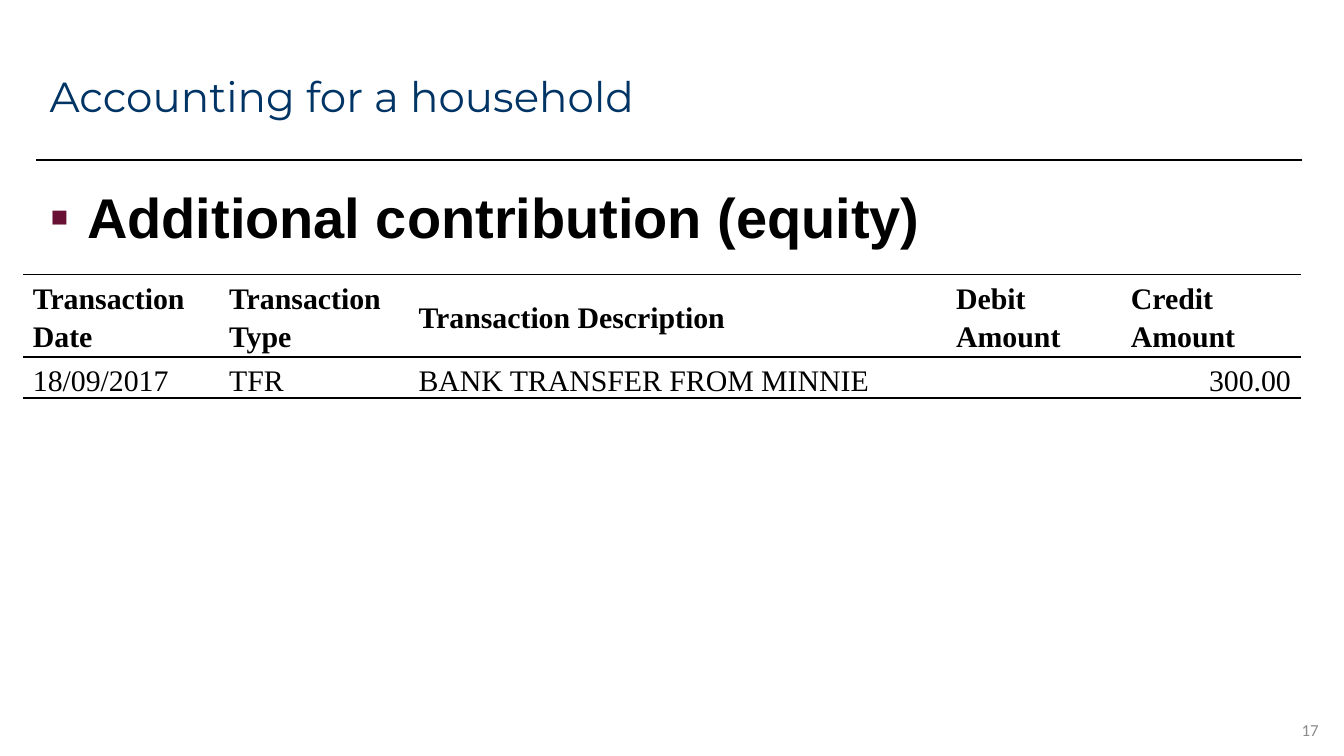
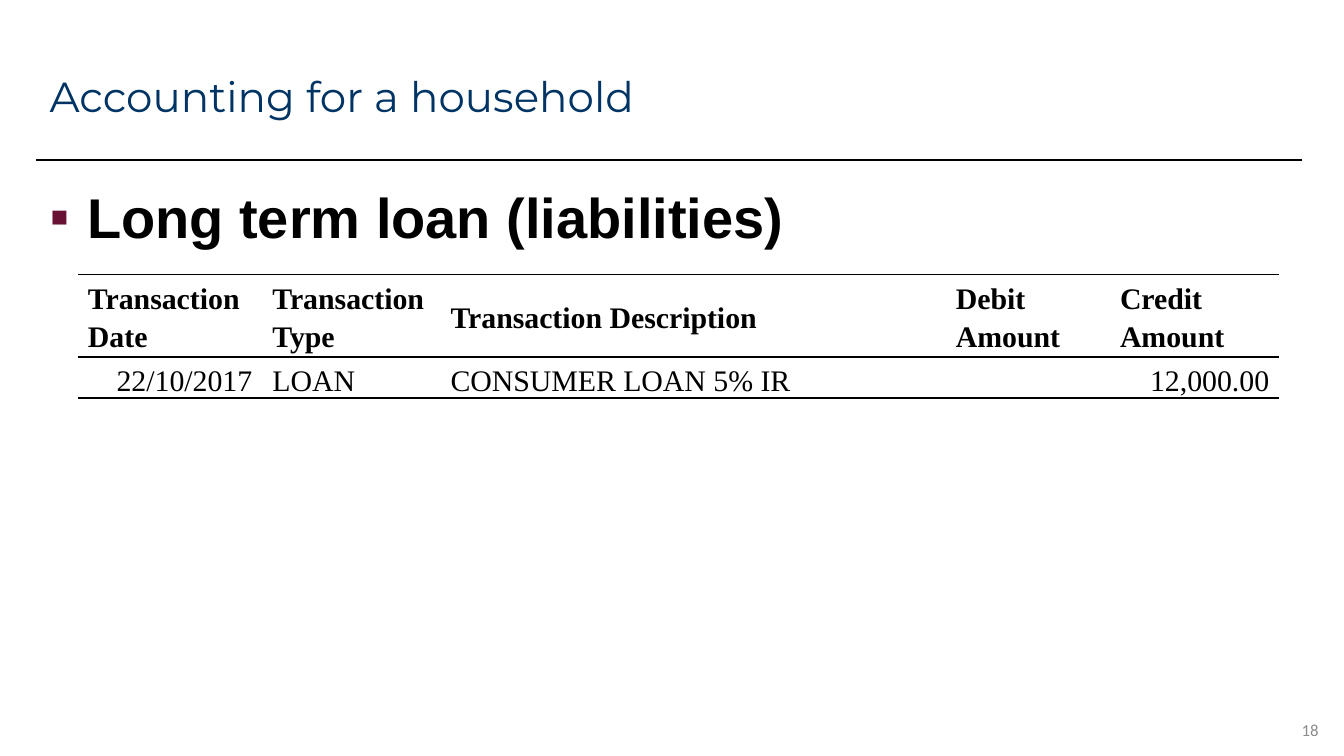
import pptx
import pptx.dml.color
import pptx.enum.shapes
import pptx.enum.text
import pptx.oxml
import pptx.oxml.ns
import pptx.util
from dataclasses import dataclass, field
from lxml import etree

RGB = pptx.dml.color.RGBColor.from_string
PP_ALIGN = pptx.enum.text.PP_ALIGN
ANCHOR = pptx.enum.text.MSO_ANCHOR
Inches, Pt = pptx.util.Inches, pptx.util.Pt
qn = pptx.oxml.ns.qn


@dataclass
class Theme:
    ink: str = "000000"
    bullet: str = "691035"
    rule: float = 1
    title: dict = field(default_factory=lambda: dict(name="Montserrat", size=Pt(22.5), color="003464"))
    body: dict = field(default_factory=lambda: dict(name="Arial", size=Pt(30), bold=True, color="000000"))
    number: dict = field(default_factory=lambda: dict(name="Calibri", size=Pt(9), color="8C8C8C"))
    head: dict = field(default_factory=lambda: dict(
        name="Times New Roman", size=Pt(16), bold=True, color="000000"))
    cell: dict = field(default_factory=lambda: dict(
        name="Times New Roman", size=Pt(16), bold=False, color="000000"))


theme = Theme()
prs = pptx.Presentation()
prs.slide_width, prs.slide_height = Inches(10), Inches(5.625)
COL, ROW = prs.slide_width / 100, prs.slide_height / 100  # grid of 100 x 100


def grid(*spans):
    """Turn alternating column and row counts into lengths."""
    return [round(n * unit) for n, unit in zip(spans, (COL, ROW) * 2)]


def write(tf, text, style, align=PP_ALIGN.LEFT):
    p = tf.paragraphs[0]
    p.alignment = align
    r = p.add_run()
    r.text = text
    for key, value in style.items():
        if key == "color":
            r.font.color.rgb = RGB(value)
        else:
            setattr(r.font, key, value)
    return p


TITLE = "Accounting for a household"
HEADINGS = ["Transaction Date", "Transaction Type", "Transaction Description",
            "Debit Amount", "Credit Amount"]
COLUMNS = [14.6, 14.1, 40, 13, 13.4]
ROWS = [10, 5]
PLAIN_TABLE = "{2D5ABB26-0587-4C30-8999-92F81FD0307C}"
LEFT, RIGHT = PP_ALIGN.LEFT, PP_ALIGN.RIGHT

slides = [
    dict(number=17, topic="Additional contribution (equity)", left=1.7, scale=1, date_align=LEFT,
         entry=["18/09/2017", "TFR", "BANK TRANSFER FROM MINNIE", "", "300.00"]),
    dict(number=18, topic="Long term loan (liabilities)", left=5.8, scale=0.94, date_align=RIGHT,
         entry=["22/10/2017", "LOAN", "CONSUMER LOAN 5% IR", "", "12,000.00"]),
]

for page in slides:
    s = prs.slides.add_slide(prs.slide_layouts[6])

    rule = s.shapes.add_connector(pptx.enum.shapes.MSO_CONNECTOR.STRAIGHT, *grid(96.9, 21.2, 2.7, 21.2))
    rule.line.color.rgb = RGB(theme.ink)
    rule.line.width = Pt(theme.rule)
    etree.SubElement(rule._element.spPr, qn("a:effectLst"))

    texts = [
        (TITLE, (2.7, 5.2, 94.1, 14.8), theme.title, LEFT, ANCHOR.MIDDLE),
        (page["topic"], (2.7, 22.6, 94.1, 70.8), theme.body, LEFT, ANCHOR.TOP),
        (str(page["number"]), (91.1, 93.9, 8, 5.3), theme.number, RIGHT, ANCHOR.MIDDLE),
    ]
    for text, box, style, align, anchor in texts:
        tf = s.shapes.add_textbox(*grid(*box)).text_frame
        tf.word_wrap = True
        tf.vertical_anchor = anchor
        p = write(tf, text, style, align)
        if style is theme.body:
            tf.margin_top = round(1.6 * ROW)
            pPr = p._p.get_or_add_pPr()
            indent = round(2.8 * COL)
            pPr.set("marL", str(indent))
            pPr.set("indent", str(-indent))
            color = etree.SubElement(pPr, qn("a:buClr"))
            etree.SubElement(color, qn("a:srgbClr"), val=theme.bullet)
            etree.SubElement(pPr, qn("a:buFont"), typeface="Arial")
            etree.SubElement(pPr, qn("a:buChar"), char="▪")

    widths = [w * page["scale"] for w in COLUMNS]
    frame = s.shapes.add_table(2, len(widths), *grid(page["left"], 36.3, sum(widths), sum(ROWS)))
    table = frame.table
    table.first_row = table.horz_banding = False
    table._tbl.tblPr.find(qn("a:tableStyleId")).text = PLAIN_TABLE
    for column, width in zip(table.columns, widths):
        column.width = round(width * COL)
    for row, height in zip(table.rows, ROWS):
        row.height = round(height * ROW)

    plain = [LEFT] * len(HEADINGS)
    lines = [
        (HEADINGS, plain, theme.head, ANCHOR.MIDDLE),
        (page["entry"], [page["date_align"], LEFT, LEFT, LEFT, RIGHT], theme.cell, ANCHOR.BOTTOM),
    ]
    for i, (values, aligns, style, anchor) in enumerate(lines):
        for j, (value, align) in enumerate(zip(values, aligns)):
            cell = table.cell(i, j)
            cell.fill.background()
            cell.vertical_anchor = anchor
            cell.margin_left = cell.margin_right = round(0.75 * COL)
            cell.margin_top = cell.margin_bottom = 0
            write(cell.text_frame, value, style, align).line_spacing = 1.15
            for k, side in enumerate(("a:lnT", "a:lnB")):
                ln = etree.Element(qn(side), w=str(Pt(theme.rule)))
                fill = etree.SubElement(ln, qn("a:solidFill"))
                etree.SubElement(fill, qn("a:srgbClr"), val=theme.ink)
                cell._tc.get_or_add_tcPr().insert(k, ln)

prs.save("out.pptx")
